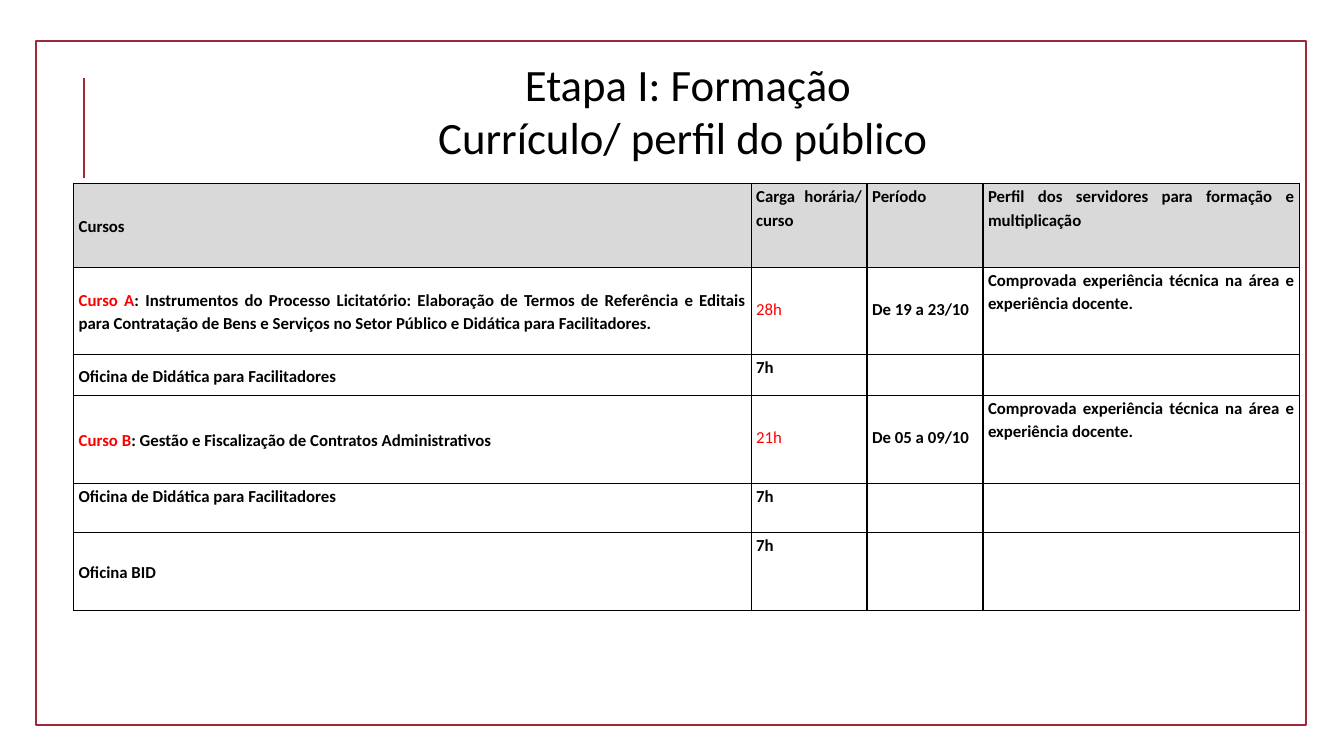
from dataclasses import dataclass

from lxml import etree
from pptx import Presentation
from pptx.dml.color import RGBColor
from pptx.enum.shapes import MSO_CONNECTOR, MSO_SHAPE
from pptx.enum.text import MSO_ANCHOR, PP_ALIGN
from pptx.oxml import parse_xml
from pptx.oxml.ns import nsdecls, qn
from pptx.util import Inches, Pt

RECT = MSO_SHAPE.RECTANGLE
STRAIGHT = MSO_CONNECTOR.STRAIGHT
TOP, MIDDLE = MSO_ANCHOR.TOP, MSO_ANCHOR.MIDDLE
CENTER, JUSTIFY = PP_ALIGN.CENTER, PP_ALIGN.JUSTIFY


@dataclass(frozen=True)
class Theme:
    font: str = "Calibri"
    ink: str = "000000"
    red: str = "FF0000"
    frame: str = "9F2936"
    head: str = "D9D9D9"
    title: float = 32
    body: float = 12


class Deck:
    """Draws styled elements on the current slide."""

    def __init__(self, theme):
        self.theme = theme
        self.deck = Presentation()
        self.deck.slide_width = Inches(13.33)
        self.deck.slide_height = Inches(7.5)
        self.slide = self.deck.slides.add_slide(self.deck.slide_layouts[6])

    def apply(self, target, values):
        for name, value in values.items():
            setattr(target, name, value)

    def stroke(self, line, width):
        line.color.rgb = RGBColor.from_string(self.theme.frame)
        line.width = Pt(width)

    def text(self, para, words, size, color, bold=False):
        run = para.add_run()
        run.text = words
        self.apply(run.font, {"name": self.theme.font, "size": Pt(size), "bold": bold})
        run.font.color.rgb = RGBColor.from_string(color)

    def frame(self, box, width):
        shape = self.slide.shapes.add_shape(RECT, *map(Inches, box))
        shape.shadow.inherit = False
        shape.fill.background()
        self.stroke(shape.line, width)

    def rule(self, ends, width):
        line = self.slide.shapes.add_connector(STRAIGHT, *map(Inches, ends))
        self.stroke(line.line, width)
        etree.SubElement(line._element.spPr, qn("a:effectLst"))

    def title(self, box, lines):
        frame = self.slide.shapes.add_textbox(*map(Inches, box)).text_frame
        frame.word_wrap = True
        for index, words in enumerate(lines):
            para = frame.add_paragraph() if index else frame.paragraphs[0]
            para.alignment = CENTER
            self.text(para, words, self.theme.title, self.theme.ink)

    def border(self, cell):
        props = cell._tc.get_or_add_tcPr()
        for side in "LRTB":
            props.append(parse_xml(
                f'<a:ln{side} {nsdecls("a")} w="12700"><a:solidFill>'
                f'<a:srgbClr val="{self.theme.ink}"/></a:solidFill></a:ln{side}>'))

    def cell(self, cell, runs, fill=None, anchor=TOP, inset=0):
        self.apply(cell, {
            "margin_left": Inches(0.05), "margin_right": Inches(0.05),
            "margin_top": Inches(inset), "margin_bottom": 0,
            "vertical_anchor": anchor})
        self.border(cell)
        if fill:
            cell.fill.solid()
            cell.fill.fore_color.rgb = RGBColor.from_string(fill)
        else:
            cell.fill.background()
        para = cell.text_frame.paragraphs[0]
        self.apply(para, {"alignment": JUSTIFY, "line_spacing": 1.15})
        for words, color, bold in runs:
            self.text(para, words, self.theme.body, color, bold)

    def table(self, spot, widths, heights, rows):
        size = sum(widths), sum(heights)
        table = self.slide.shapes.add_table(
            len(rows), len(widths), *map(Inches, spot + size)).table
        self.apply(table, {"first_row": False, "horz_banding": False})
        for column, width in zip(table.columns, widths):
            column.width = Inches(width)
        for row, height in zip(table.rows, heights):
            row.height = Inches(height)
        for r, row in enumerate(rows):
            for c, item in enumerate(row):
                self.cell(table.cell(r, c), **item)

    def save(self):
        self.deck.save("out.pptx")


def main():
    theme = Theme()
    deck = Deck(theme)

    def plain(words, **style):
        return {"runs": [(words, theme.ink, True)] if words else [], **style}

    def course(name, topic, hours, dates):
        return [
            {"runs": [(name, theme.red, True), (topic, theme.ink, True)],
             "anchor": MIDDLE},
            {"runs": [(hours, theme.red, False)], "inset": 0.29},
            plain(dates, inset=0.29),
            plain("Comprovada experiência técnica na área e experiência docente."),
        ]

    def workshop(name, anchor=MIDDLE):
        return [plain(name, anchor=anchor), plain("7h"), plain(""), plain("")]

    training = "Oficina de Didática para Facilitadores"
    rows = [
        [plain("Cursos", fill=theme.head, anchor=MIDDLE)]
        + [plain(words, fill=theme.head) for words in (
            "Carga horária/ curso", "Período",
            "Perfil dos servidores para formação e multiplicação")],
        course("Curso A", ": Instrumentos do Processo Licitatório: Elaboração de "
               "Termos de Referência e Editais para Contratação de Bens e Serviços "
               "no Setor Público e Didática para Facilitadores.",
               "28h", "De 19 a 23/10"),
        workshop(training),
        course("Curso B", ": Gestão e Fiscalização de Contratos Administrativos",
               "21h", "De 05 a 09/10"),
        workshop(training, TOP),
        workshop("Oficina BID"),
    ]

    deck.frame((0.36, 0.41, 12.59, 6.78), 1.25)
    deck.rule((0.83, 1.77, 0.83, 0.77), 1.5)
    deck.title((1.19, 0.51, 11.17, 1.18),
               (" Etapa I: Formação", " Currículo/ perfil do público "))
    deck.table((0.73, 1.82), (6.72, 1.15, 1.15, 3.14),
               (0.83, 0.87, 0.4, 0.88, 0.48, 0.78), rows)
    deck.save()


if __name__ == "__main__":
    main()
